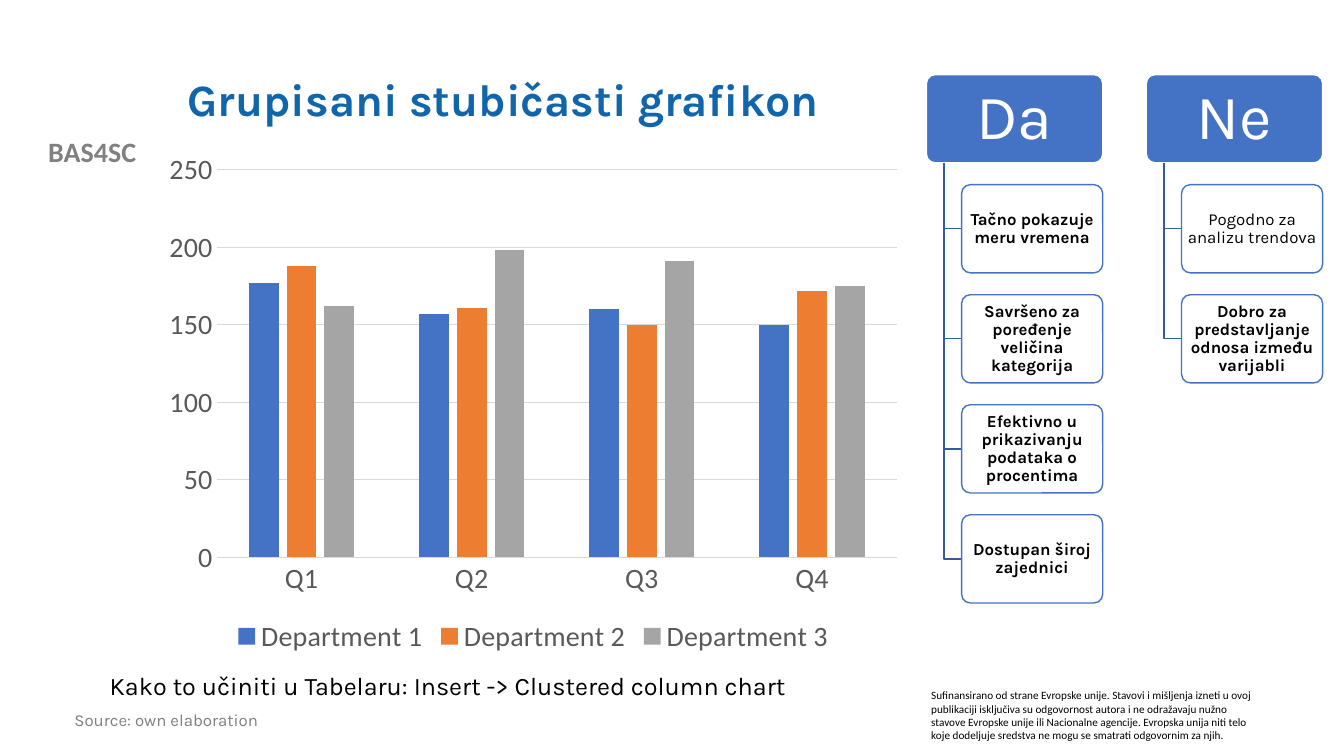
from dataclasses import dataclass

from lxml.etree import SubElement
from pptx import Presentation
from pptx.chart.data import CategoryChartData
from pptx.dml.color import RGBColor
from pptx.enum.chart import XL_CHART_TYPE, XL_LEGEND_POSITION, XL_TICK_MARK
from pptx.enum.shapes import MSO_SHAPE
from pptx.enum.text import MSO_ANCHOR, MSO_AUTO_SIZE, PP_ALIGN
from pptx.oxml.ns import qn
from pptx.util import Pt


@dataclass(frozen=True)
class Theme:
    heading_font: str = "Karla"
    plain_font: str = "Calibri"
    title: str = "1065AB"
    blue: str = "4472C4"
    orange: str = "ED7D31"
    silver: str = "A5A5A5"
    branch: str = "365B9D"
    grid: str = "D9D9D9"
    axis: str = "595959"
    label: str = "808080"
    source: str = "7F7F7F"
    black: str = "000000"
    white: str = "FFFFFF"
    header_size: int = 45
    title_size: int = 32
    chart_size: int = 20
    body_size: int = 18
    card_size: int = 12
    notice_size: int = 8


def color(code):
    return RGBColor.from_string(code)


class Slide:
    def __init__(self, page, theme):
        self.page = page
        self.theme = theme

    def style(self, font, size, code, name=None, bold=False):
        font.name = name or self.theme.heading_font
        font.size = Pt(size)
        font.bold = bold
        font.color.rgb = color(code)

    def fill_text(self, shape, text, size, code, name=None, bold=False,
                  align=PP_ALIGN.LEFT, anchor=MSO_ANCHOR.TOP, spacing=1.0):
        frame = shape.text_frame
        frame.text = text
        frame.word_wrap = True
        frame.auto_size = MSO_AUTO_SIZE.NONE
        frame.vertical_anchor = anchor
        para = frame.paragraphs[0]
        para.alignment = align
        para.line_spacing = spacing
        for span in para.runs:
            self.style(span.font, size, code, name, bold)

    def title(self, text, left, top, width, height):
        shape = self.page.shapes.title
        shape.left, shape.top = Pt(left), Pt(top)
        shape.width, shape.height = Pt(width), Pt(height)
        self.fill_text(shape, text, self.theme.title_size, self.theme.title,
                       bold=True, anchor=MSO_ANCHOR.MIDDLE, spacing=0.9)

    def text(self, text, left, top, width, height, size, code, **options):
        box = self.page.shapes.add_textbox(Pt(left), Pt(top), Pt(width), Pt(height))
        self.fill_text(box, text, size, code, **options)

    def card(self, text, left, top, width, height, fill, line, size, code,
             bold=False, margins=(2.2, 1.5), opacity=100):
        shape = self.page.shapes.add_shape(
            MSO_SHAPE.ROUNDED_RECTANGLE, Pt(left), Pt(top), Pt(width), Pt(height))
        shape.adjustments[0] = 0.1
        shape.shadow.inherit = False
        shape.fill.solid()
        shape.fill.fore_color.rgb = color(fill)
        if opacity < 100:
            solid = shape.element.spPr.find(qn("a:solidFill"))
            SubElement(solid[0], qn("a:alpha"), val=str(opacity * 1000))
        shape.line.color.rgb = color(line)
        shape.line.width = Pt(1)
        frame = shape.text_frame
        frame.margin_left = frame.margin_right = Pt(margins[0])
        frame.margin_top = frame.margin_bottom = Pt(margins[1])
        self.fill_text(shape, text, size, code, bold=bold, align=PP_ALIGN.CENTER,
                       anchor=MSO_ANCHOR.MIDDLE, spacing=0.9)

    def branch(self, left, top, right, bottom):
        builder = self.page.shapes.build_freeform(Pt(left), Pt(top))
        builder.add_line_segments(
            [(Pt(left), Pt(bottom)), (Pt(right), Pt(bottom))], close=False)
        shape = builder.convert_to_shape()
        shape.shadow.inherit = False
        shape.fill.background()
        shape.line.color.rgb = color(self.theme.branch)
        shape.line.width = Pt(1)

    def column_chart(self, categories, series, left, top, width, height):
        theme = self.theme
        data = CategoryChartData()
        data.categories = categories
        for name, values, _ in series:
            data.add_series(name, values)
        chart = self.page.shapes.add_chart(
            XL_CHART_TYPE.COLUMN_CLUSTERED, Pt(left), Pt(top),
            Pt(width), Pt(height), data).chart
        chart.has_title = False
        chart.has_legend = True
        chart.legend.position = XL_LEGEND_POSITION.BOTTOM
        chart.legend.include_in_layout = False
        plot = chart.plots[0]
        plot.gap_width, plot.overlap = 219, -27
        plot.vary_by_categories = False
        for item, (_, _, code) in zip(plot.series, series):
            item.format.fill.solid()
            item.format.fill.fore_color.rgb = color(code)
        category_axis, value_axis = chart.category_axis, chart.value_axis
        value_axis.minimum_scale, value_axis.maximum_scale = 0, 250
        value_axis.major_unit = 50
        value_axis.has_major_gridlines = True
        value_axis.format.line.fill.background()
        for axis in (category_axis, value_axis):
            axis.major_tick_mark = axis.minor_tick_mark = XL_TICK_MARK.NONE
        for line in (category_axis.format.line, value_axis.major_gridlines.format.line):
            line.color.rgb = color(theme.grid)
            line.width = Pt(0.75)
        for font in (chart.font, chart.legend.font,
                     category_axis.tick_labels.font, value_axis.tick_labels.font):
            self.style(font, theme.chart_size, theme.axis, theme.plain_font)

    def verdict(self, heading, reasons, left, top):
        theme = self.theme
        width, height, step = 126, 63, 78.6
        spine, indent = left + 12.6, left + 25.2
        self.card(heading, left, top, width, height, theme.blue, theme.white,
                  theme.header_size, theme.white, margins=(6.5, 4.3))
        for number, (reason, bold) in enumerate(reasons, 1):
            card_top = top + number * step
            self.branch(spine, top + height, indent, card_top + height / 2)
            self.card(reason, indent, card_top, width - 25.2, height, theme.white,
                      theme.blue, theme.card_size, theme.black, bold, opacity=90)


def main():
    theme = Theme()
    deck = Presentation()
    deck.slide_width, deck.slide_height = Pt(960), Pt(540)
    slide = Slide(deck.slides.add_slide(deck.slide_layouts[5]), theme)

    slide.text("BAS4SC", 0, 92.2, 131.8, 31.7, theme.chart_size, theme.label,
               name=theme.plain_font, bold=True, align=PP_ALIGN.CENTER)
    slide.text(
        "Sufinansirano od strane Evropske unije. Stavovi i mišljenja izneti u ovoj "
        "publikaciji isključiva su odgovornost autora i ne odražavaju nužno stavove "
        "Evropske unije ili Nacionalne agencije. Evropska unija niti telo koje "
        "dodeljuje sredstva ne mogu se smatrati odgovornim za njih.",
        658.1, 488.2, 247.7, 46.1, theme.notice_size, theme.black,
        name=theme.plain_font)
    slide.title("Grupisani stubičasti grafikon", 126.7, 28.8, 767.5, 87.8)
    slide.text("Source: own elaboration", 46.1, 505.4, 360.7, 24.5,
               theme.card_size, theme.source, spacing=0.9)
    slide.column_chart(
        ["Q1", "Q2", "Q3", "Q4"],
        [("Department 1", (177, 157, 160, 150), theme.blue),
         ("Department 2", (188, 161, 150, 172), theme.orange),
         ("Department 3", (162, 198, 191, 175), theme.silver)],
        110.2, 101.5, 541.4, 369.4)

    verdicts = {
        "Da": [("Tačno pokazuje meru vremena", True),
               ("Savršeno za poređenje veličina kategorija", True),
               ("Efektivno u prikazivanju podataka o procentima", True),
               ("Dostupan široj zajednici", True)],
        "Ne": [("Pogodno za analizu trendova", False),
               ("Dobro za predstavljanje odnosa između varijabli", True)],
    }
    for column, (heading, reasons) in enumerate(verdicts.items()):
        slide.verdict(heading, reasons, 661.7 + column * 157.1, 53.3)

    slide.text("Kako to učiniti u Tabelaru: Insert -> Clustered column chart",
               71.3, 475.2, 567.4, 30.2, theme.body_size, theme.black)
    deck.save("out.pptx")


if __name__ == "__main__":
    main()
